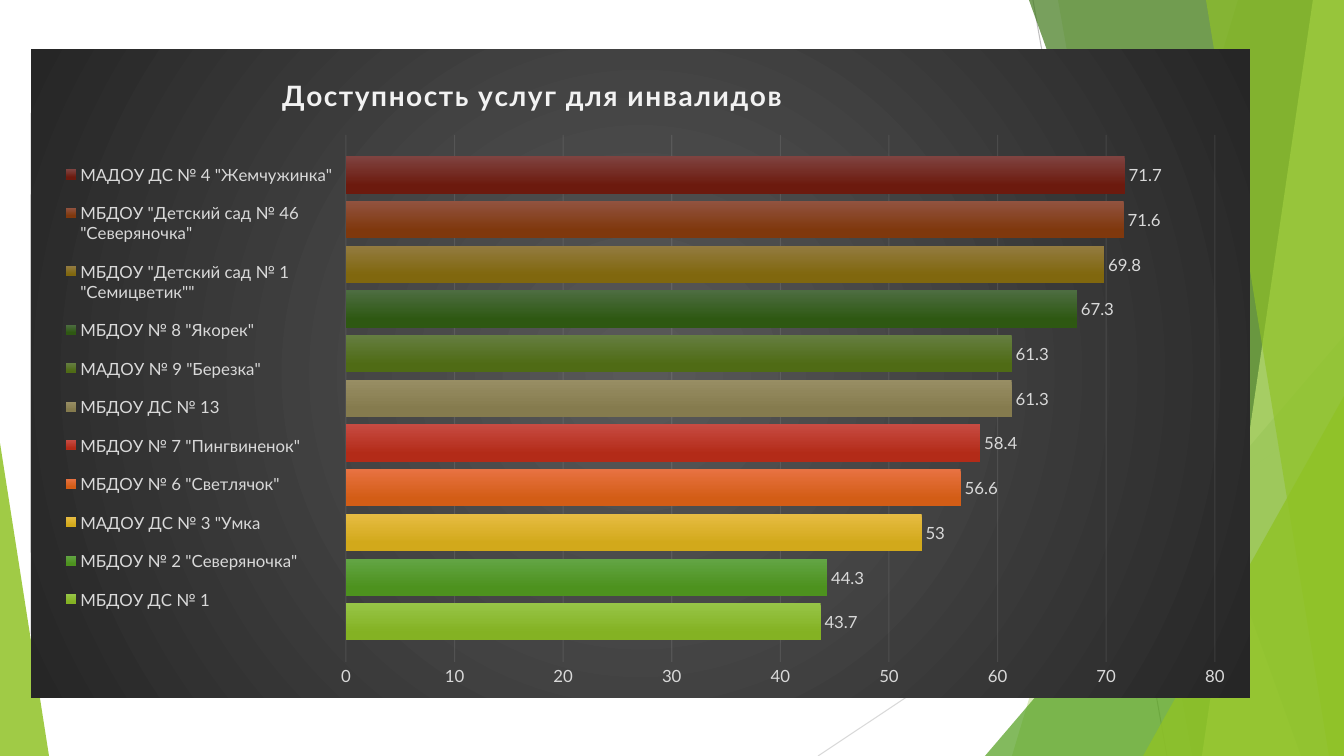
from lxml.etree import SubElement
from pptx import Presentation
from pptx.chart.data import CategoryChartData
from pptx.dml.color import RGBColor
from pptx.enum.chart import XL_CHART_TYPE, XL_LABEL_POSITION, XL_LEGEND_POSITION, XL_TICK_MARK
from pptx.enum.shapes import MSO_CONNECTOR, MSO_SHAPE
from pptx.oxml import parse_xml
from pptx.oxml.ns import nsdecls, qn
from pptx.util import Emu, Pt

PX = 12192000 / 1344
WIDTH, HEIGHT = 1344, 756
CHART_BOX = (31, 49, 1219, 649)
FONT = "Lato"
COLORS = {
    "lime": "90C226", "green": "54A021", "forest": "3F7819", "pale": "C0E474",
    "line": "BFBFBF", "light_line": "D9D9D9", "text": "D9D9D9", "title": "F2F2F2",
    "grid": "F2F2F2", "center": "595959", "edge": "262626",
}
# top-left x, bottom-right x, bottom-left x, colour, opacity
BANDS_BACK = [(1238, 1344, 1012, "lime", 30), (1058, 1344, 1192, "lime", 20)]
BANDS_FRONT = [
    (1029, 1344, 1301, "forest", 70),
    (1313, 1344, 1202, "pale", 70),
    (1206, 1344, 1329, "lime", 65),
]
# left, top, width, apex position, colour, opacity
TRIANGLE_BACK = (985, 336, 359, 1, "green", 72)
TRIANGLES_FRONT = [(1143, 396, 201, 1, "lime", 80), (0, 443, 49, 0, "lime", 85)]
# name, value, gradient start, gradient end
KINDERGARTENS = [
    ("МБДОУ ДС № 1", 43.7, "97C547", "84B223"),
    ('МБДОУ № 2 "Северяночка"', 44.3, "63A545", "4D921E"),
    ('МАДОУ ДС № 3 "Умка', 53, "E7BC43", "D2A91B"),
    ('МБДОУ № 6 "Светлячок"', 56.6, "E87242", "D35D16"),
    ('МБДОУ № 7 "Пингвиненок"', 58.4, "C74B42", "B32B18"),
    ("МБДОУ ДС № 13", 61.3, "988E64", "857B4E"),
    ('МАДОУ № 9 "Березка"', 61.3, "657E41", "4F6B15"),
    ('МБДОУ № 8 "Якорек"', 67.3, "4D6D41", "2E5812"),
    ('МБДОУ "Детский сад № 1 "Семицветик""', 69.8, "937B40", "80670E"),
    ('МБДОУ "Детский сад № 46 "Северяночка"', 71.6, "925340", "7F380D"),
    ('МАДОУ ДС № 4 "Жемчужинка"', 71.7, "7F4340", "6C1A0E"),
]


def px(*lengths):
    return [Emu(round(length * PX)) for length in lengths]


def set_all(target, formats):
    for name, value in formats.items():
        setattr(target, name, value)


def style_font(font, size, color, bold=False):
    set_all(font, {"name": FONT, "size": Pt(size), "bold": bold})
    font.color.rgb = RGBColor.from_string(COLORS[color])


def set_opacity(element, percent):
    for color in element.iter(qn("a:srgbClr")):
        SubElement(color, qn("a:alpha"), val=str(percent * 1000))


def paint(shape, color, opacity):
    shape.shadow.inherit = False
    shape.fill.solid()
    shape.fill.fore_color.rgb = RGBColor.from_string(COLORS[color])
    shape.line.fill.background()
    set_opacity(shape._element.spPr, opacity)


def add_line(slide, start, end, color):
    line = slide.shapes.add_connector(MSO_CONNECTOR.STRAIGHT, *px(*start, *end))
    line.line.color.rgb = RGBColor.from_string(COLORS[color])
    line.line.width = Pt(0.75)
    SubElement(line._element.spPr, qn("a:effectLst"))


def add_band(slide, top_left, bottom_right, bottom_left, color, opacity):
    """Draw a full-height facet that ends at the right edge of the slide."""
    outline = slide.shapes.build_freeform(top_left, 0, PX)
    corners = [(WIDTH, 0), (bottom_right, HEIGHT), (bottom_left, HEIGHT)]
    outline.add_line_segments(corners, close=True)
    paint(outline.convert_to_shape(), color, opacity)


def add_triangle(slide, left, top, width, apex, color, opacity):
    """Draw a triangle that stands on the bottom edge of the slide."""
    triangle = slide.shapes.add_shape(
        MSO_SHAPE.ISOSCELES_TRIANGLE, *px(left, top, width, HEIGHT - top))
    triangle.adjustments[0] = apex
    paint(triangle, color, opacity)


def add_background(slide):
    add_line(slide, (1033, 0), (1167, HEIGHT), "line")
    add_line(slide, (WIDTH, 406), (818, HEIGHT), "light_line")
    for band in BANDS_BACK:
        add_band(slide, *band)
    add_triangle(slide, *TRIANGLE_BACK)
    for band in BANDS_FRONT:
        add_band(slide, *band)
    for triangle in TRIANGLES_FRONT:
        add_triangle(slide, *triangle)


def place(element, left, top, width=None, height=None, inner=False):
    """Give a chart part a fixed position, in px on the slide."""
    for old in element.findall(qn("c:layout")):
        element.remove(old)
    chart_left, chart_top, chart_width, chart_height = CHART_BOX
    parts = [("layoutTarget", "inner")] if inner else []
    parts += [("xMode", "edge"), ("yMode", "edge"),
              ("x", round((left - chart_left) / chart_width, 4)),
              ("y", round((top - chart_top) / chart_height, 4))]
    if width:
        parts += [("w", round(width / chart_width, 4)), ("h", round(height / chart_height, 4))]
    values = "".join(f'<c:{tag} val="{value}"/>' for tag, value in parts)
    layout = parse_xml(
        f'<c:layout {nsdecls("c")}><c:manualLayout>{values}</c:manualLayout></c:layout>')
    before = [child for child in element if child.tag in (qn("c:tx"), qn("c:legendPos"))]
    if before:
        before[-1].addnext(layout)
    else:
        element.insert(0, layout)


def fill_chart_area(chart):
    chart._chartSpace.find(qn("c:chart")).addnext(parse_xml(
        f'<c:spPr {nsdecls("c", "a")}><a:gradFill><a:gsLst>'
        f'<a:gs pos="0"><a:srgbClr val="{COLORS["center"]}"/></a:gs>'
        f'<a:gs pos="100000"><a:srgbClr val="{COLORS["edge"]}"/></a:gs></a:gsLst>'
        '<a:path path="circle"><a:fillToRect l="50000" t="50000" r="50000" b="50000"/></a:path>'
        '</a:gradFill><a:ln><a:noFill/></a:ln></c:spPr>'))


def style_title(chart):
    frame = chart.chart_title.text_frame
    frame.text = "Доступность услуг для инвалидов"
    run = frame.paragraphs[0].runs[0]
    style_font(run.font, 20, "title", bold=True)
    run._r.get_or_add_rPr().set("spc", "100")
    place(chart.chart_title._element, 277, 70)


def style_legend(chart):
    chart.has_legend = True
    set_all(chart.legend, {"position": XL_LEGEND_POSITION.LEFT, "include_in_layout": False})
    style_font(chart.legend.font, 12, "text")
    place(chart.legend._element, 62, 146, 275, 482)


def style_axes(chart):
    chart.category_axis.visible = False
    values = chart.value_axis
    set_all(values, {
        "minimum_scale": 0, "maximum_scale": 80, "major_unit": 10,
        "major_tick_mark": XL_TICK_MARK.NONE, "minor_tick_mark": XL_TICK_MARK.NONE,
        "has_major_gridlines": True})
    style_font(values.tick_labels.font, 12, "text")
    values.format.line.fill.background()
    grid = values.major_gridlines.format.line
    grid.color.rgb = RGBColor.from_string(COLORS["grid"])
    grid.width = Pt(0.75)
    set_opacity(values._element.find(qn("c:majorGridlines")), 10)


def style_series(series, start, end):
    fill = series.format.fill
    fill.gradient()
    fill.gradient_angle = 270
    for stop, position, color in zip(fill.gradient_stops, (0, 0.78), (start, end)):
        stop.position = position
        stop.color.rgb = RGBColor.from_string(color)
    series.format.line.fill.background()
    labels = series.data_labels
    set_all(labels, {"show_value": True, "position": XL_LABEL_POSITION.OUTSIDE_END})
    style_font(labels.font, 12, "text")


def add_accessibility_chart(slide):
    ratings = CategoryChartData()
    ratings.categories = ["1"]
    for name, value, *_ in KINDERGARTENS:
        ratings.add_series(name, [value])
    chart = slide.shapes.add_chart(
        XL_CHART_TYPE.BAR_CLUSTERED, *px(*CHART_BOX), ratings).chart
    style_font(chart.font, 10, "text")
    fill_chart_area(chart)
    style_title(chart)
    style_legend(chart)
    style_axes(chart)
    plot = chart.plots[0]
    set_all(plot, {"gap_width": 115, "overlap": -20, "vary_by_categories": False})
    for series, (_, _, start, end) in zip(plot.series, KINDERGARTENS):
        style_series(series, start, end)
    place(chart._chartSpace.chart.plotArea, 346, 135, 869, 527, inner=True)


def main():
    deck = Presentation()
    deck.slide_width, deck.slide_height = px(WIDTH, HEIGHT)
    slide = deck.slides.add_slide(deck.slide_layouts[6])
    add_background(slide)
    add_accessibility_chart(slide)
    deck.save("out.pptx")


if __name__ == "__main__":
    main()
